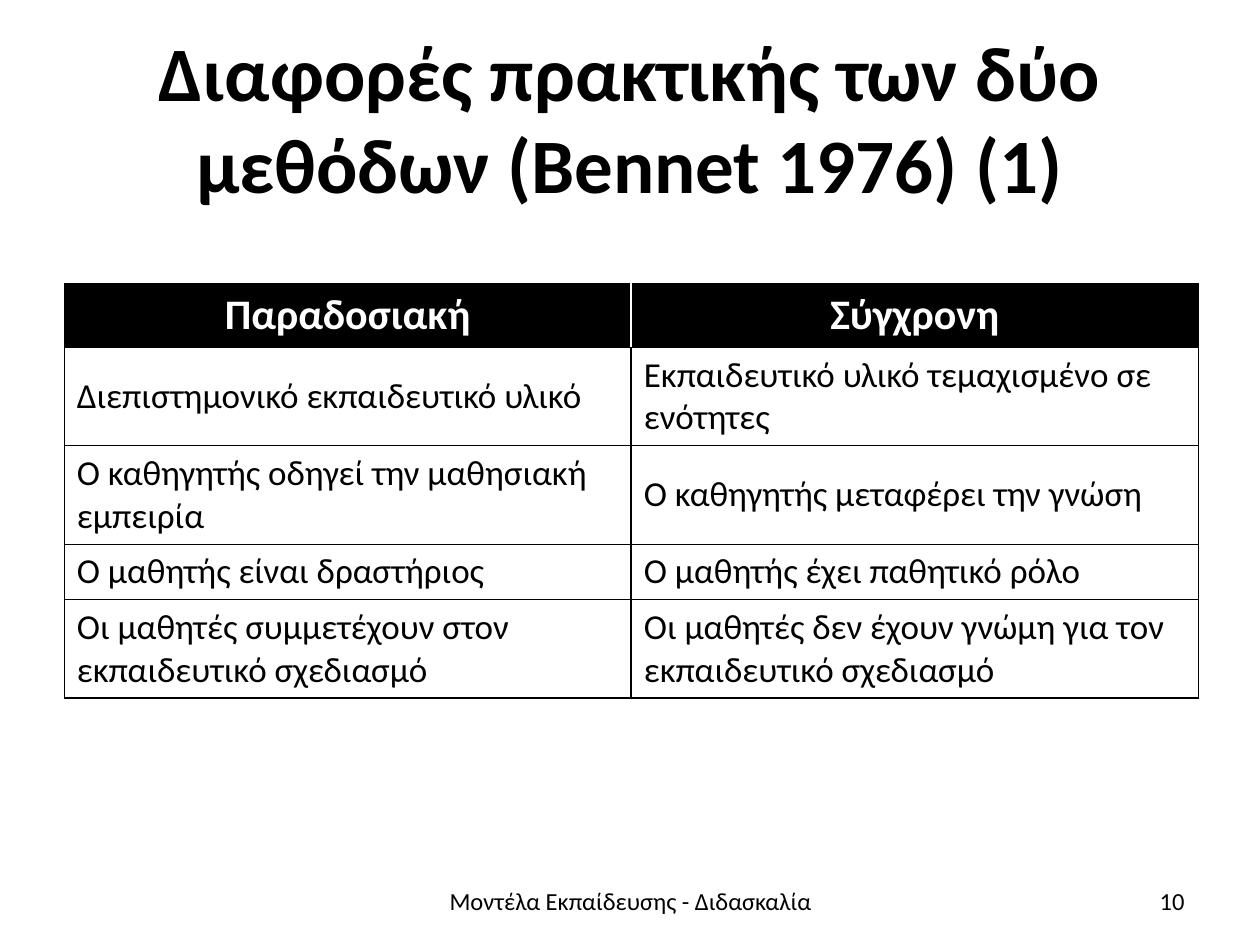
from pptx import Presentation
from pptx.dml.color import RGBColor as Rgb
from pptx.enum.text import MSO_ANCHOR as Anchor, PP_ALIGN as Align
from pptx.oxml.ns import qn
from pptx.util import Inches, Pt
from lxml.etree import SubElement

COLORS = {"ink": "000000", "paper": "FFFFFF"}
PRACTICES = [
    ("Παραδοσιακή", "Σύγχρονη"),
    ("Διεπιστημονικό εκπαιδευτικό υλικό", "Εκπαιδευτικό υλικό τεμαχισμένο σε ενότητες"),
    ("Ο καθηγητής οδηγεί την μαθησιακή εμπειρία", "Ο καθηγητής μεταφέρει την γνώση"),
    ("Ο μαθητής είναι δραστήριος", "Ο μαθητής έχει παθητικό ρόλο"),
    ("Οι μαθητές συμμετέχουν στον εκπαιδευτικό σχεδιασμό",
     "Οι μαθητές δεν έχουν γνώμη για τον εκπαιδευτικό σχεδιασμό"),
]


def write(frame, text, size=20, color="ink", bold=False, align=Align.LEFT):
    frame.word_wrap = True
    paragraph = frame.paragraphs[0]
    paragraph.alignment = align
    run = paragraph.add_run()
    run.text = text
    run.font.name = "Calibri"
    run.font.size = Pt(size)
    run.font.bold = bold
    run.font.color.rgb = Rgb.from_string(COLORS[color])


class SlideBuilder:
    """Holds the style and the slide being built."""

    def __init__(self, deck):
        self.slide = deck.slides.add_slide(deck.slide_layouts[5])

    def title(self, text, left, top, width, height):
        heading = self.slide.shapes.title
        heading.left, heading.top = Inches(left), Inches(top)
        heading.width, heading.height = Inches(width), Inches(height)
        heading.text_frame.vertical_anchor = Anchor.MIDDLE
        write(heading.text_frame, text, size=44, bold=True, align=Align.CENTER)

    def label(self, text, left, top, width, height, align):
        box = self.slide.shapes.add_textbox(
            Inches(left), Inches(top), Inches(width), Inches(height))
        box.text_frame.vertical_anchor = Anchor.MIDDLE
        write(box.text_frame, text, size=14, align=align)

    def border(self, cell, side, color, width):
        line = SubElement(cell._tc.get_or_add_tcPr(), qn(f"a:ln{side}"), w=str(Pt(width)))
        fill = SubElement(line, qn("a:solidFill"))
        SubElement(fill, qn("a:srgbClr"), val=COLORS[color])

    def table(self, rows, left, top, width, height, row_height):
        frame = self.slide.shapes.add_table(
            len(rows), len(rows[0]), Inches(left), Inches(top), Inches(width), Inches(height))
        grid = frame.table
        grid.horz_banding = False
        for row_index, texts in enumerate(rows):
            grid.rows[row_index].height = Inches(row_height)
            header = row_index == 0
            for column, text in enumerate(texts):
                cell = grid.cell(row_index, column)
                cell.vertical_anchor = Anchor.MIDDLE
                divider = ("paper" if header else "ink", 1)
                outline = ("ink", 0.75)
                self.border(cell, "L", *(divider if column > 0 else outline))
                self.border(cell, "R", *(divider if column < len(texts) - 1 else outline))
                self.border(cell, "T", *outline)
                self.border(cell, "B", *outline)
                cell.fill.solid()
                cell.fill.fore_color.rgb = Rgb.from_string(COLORS["ink" if header else "paper"])
                if header:
                    write(cell.text_frame, text, size=24, color="paper", bold=True,
                          align=Align.CENTER)
                else:
                    write(cell.text_frame, text)
        frame.height = Inches(height)


def main():
    deck = Presentation()
    deck.slide_width, deck.slide_height = Inches(10), Inches(7.5)
    builder = SlideBuilder(deck)
    builder.title("Διαφορές πρακτικής των δύο μεθόδων (Bennet 1976) (1)", 0.5, 0.3, 9, 1.25)
    builder.table(PRACTICES, 0.51, 2.25, 9, 3.23, row_height=0.41)
    builder.label("Μοντέλα Εκπαίδευσης - Διδασκαλία", 3.42, 6.95, 3.17, 0.4, Align.CENTER)
    builder.label("10", 7.17, 6.95, 2.33, 0.4, Align.RIGHT)
    deck.save("out.pptx")


if __name__ == "__main__":
    main()
